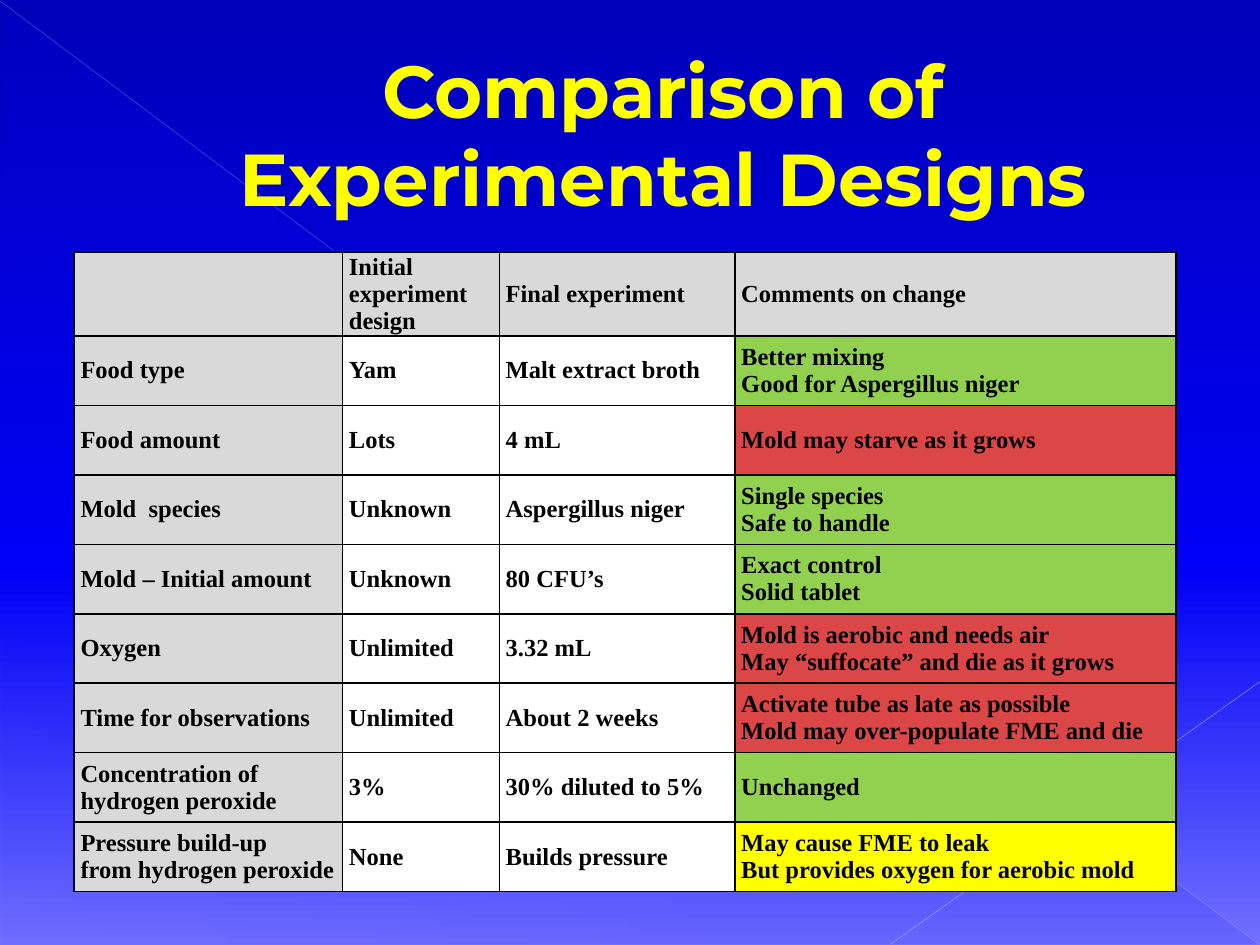
import pptx
import pptx.dml.color
import pptx.enum.shapes
import pptx.enum.text
import pptx.oxml.ns
import pptx.util
from lxml import etree

Pt = pptx.util.Pt
qn = pptx.oxml.ns.qn
MIDDLE = pptx.enum.text.MSO_ANCHOR.MIDDLE

GREY, WHITE, BLACK, YELLOW = "D9D9D9", "FFFFFF", "000000", "FFFF00"
BETTER, WORSE, MIXED = "92D050", "DB4747", YELLOW

HEADINGS = ["", "Initial experiment design", "Final experiment", "Comments on change"]
COMPARISONS = [
    ("Food type", "Yam", "Malt extract broth",
     "Better mixing\nGood for Aspergillus niger", BETTER),
    ("Food amount", "Lots", "4 mL", "Mold may starve as it grows", WORSE),
    ("Mold  species", "Unknown", "Aspergillus niger",
     "Single species\nSafe to handle", BETTER),
    ("Mold – Initial amount", "Unknown", "80 CFU’s",
     "Exact control\nSolid tablet", BETTER),
    ("Oxygen", "Unlimited", "3.32 mL",
     "Mold is aerobic and needs air\nMay “suffocate” and die as it grows", WORSE),
    ("Time for observations", "Unlimited", "About 2 weeks",
     "Activate tube as late as possible\nMold may over-populate FME and die", WORSE),
    ("Concentration of hydrogen peroxide", "3%", "30% diluted to 5%",
     "Unchanged", BETTER),
    ("Pressure build-up\nfrom hydrogen peroxide", "None", "Builds pressure",
     "May cause FME to leak\nBut provides oxygen for aerobic mold", MIXED),
]
COLUMN_WIDTHS = [153.4, 89.6, 134.6, 252]
HEADER_HEIGHT, ROW_HEIGHT = 48, 39.7

TITLE_FONT = {"name": "Montserrat", "size": Pt(42), "bold": True}
CELL_FONT = {"name": "Times New Roman", "size": Pt(14), "bold": True}
CELL_FORMAT = {"margin_left": Pt(3.6), "margin_right": Pt(3.6),
               "margin_top": 0, "margin_bottom": 0, "vertical_anchor": MIDDLE}


def colour(hex_value):
    return pptx.dml.color.RGBColor.from_string(hex_value)


def apply_format(target, values):
    for name, value in values.items():
        setattr(target, name, value)


def set_opacity(colour_element, percent):
    etree.SubElement(colour_element, qn("a:alpha"), val=str(percent * 1000))


def add_solid_line(parent, tag, hex_value, width):
    line = etree.Element(qn(tag), w=str(Pt(width)))
    fill = etree.SubElement(line, qn("a:solidFill"))
    etree.SubElement(fill, qn("a:srgbClr"), val=hex_value)
    parent.insert(0, line)


def set_gradient(fill, owner, stops, angle):
    fill.gradient()
    gradient = owner.find(".//" + qn("a:gradFill"))
    for child in list(gradient):
        gradient.remove(child)
    stop_list = etree.SubElement(gradient, qn("a:gsLst"))
    for position, hex_value, opacity in stops:
        stop = etree.SubElement(stop_list, qn("a:gs"), pos=str(position * 1000))
        set_opacity(etree.SubElement(stop, qn("a:srgbClr"), val=hex_value), opacity)
    etree.SubElement(gradient, qn("a:lin"), ang=str(angle * 60000), scaled="0")


def add_backdrop(slide, left, top, width, height):
    set_gradient(slide.background.fill, slide.element,
                 [(0, "0000B9", 100), (60, "0000F6", 100), (100, "7070FF", 100)], 90)
    sheen = slide.shapes.add_shape(pptx.enum.shapes.MSO_SHAPE.RIGHT_TRIANGLE,
                                   Pt(left + 1), Pt(top + 1),
                                   Pt(width - 2), Pt(height - 2))
    sheen.shadow.inherit = False
    sheen.line.fill.background()
    set_gradient(sheen.fill, sheen.element,
                 [(0, "0000FF", 10), (70, "0000FF", 8), (100, "0000FF", 1)], 133)

    right, bottom = left + width, top + height
    diagonals = [
        ((left, top + 0.5, right - 0.5, bottom - 0.5), "B4B4FF", 0.39, 35),
        ((right, top + 389.5, left + 509, bottom - 0.5), "BDBDFF", 0.47, 45),
    ]
    for ends, hex_value, weight, opacity in diagonals:
        diagonal = slide.shapes.add_connector(pptx.enum.shapes.MSO_CONNECTOR.STRAIGHT,
                                              *map(Pt, ends))
        diagonal.line.width = Pt(weight)
        diagonal.line.color.rgb = colour(hex_value)
        properties = diagonal.element.spPr
        set_opacity(properties.find(".//" + qn("a:srgbClr")), opacity)
        etree.SubElement(properties, qn("a:effectLst"))


def place_title(slide, left, top, width, height):
    title = slide.shapes.title
    title.element.getparent().append(title.element)
    apply_format(title, {"left": Pt(left), "top": Pt(top),
                         "width": Pt(width), "height": Pt(height)})
    apply_format(title.text_frame, {"text": "Comparison of Experimental Designs",
                                    "word_wrap": True, "vertical_anchor": MIDDLE,
                                    "auto_size": pptx.enum.text.MSO_AUTO_SIZE.NONE})
    heading = title.text_frame.paragraphs[0]
    heading.alignment = pptx.enum.text.PP_ALIGN.CENTER
    apply_format(heading, {"space_before": Pt(0)})
    indent = heading.runs[0].font
    apply_format(indent, TITLE_FONT)
    indent.color.rgb = colour(YELLOW)
    add_solid_line(title.element.find(".//" + qn("a:rPr")), "a:ln", "B10000", 0.5)
    paragraph_properties = title.element.find(".//" + qn("a:pPr"))
    paragraph_properties.set("marL", str(Pt(38)))
    paragraph_properties.set("indent", "0")


def fill_cell(cell, text, hex_value):
    apply_format(cell, {"text": text, **CELL_FORMAT})
    cell.fill.solid()
    cell.fill.fore_color.rgb = colour(hex_value)
    for paragraph in cell.text_frame.paragraphs:
        apply_format(paragraph.font, CELL_FONT)
        for run in paragraph.runs:
            apply_format(run.font, CELL_FONT)
            run.font.color.rgb = colour(BLACK)


def add_comparison_table(slide, left, top):
    heights = [HEADER_HEIGHT] + [ROW_HEIGHT] * len(COMPARISONS)
    frame = slide.shapes.add_table(len(heights), len(COLUMN_WIDTHS), Pt(left), Pt(top),
                                   Pt(sum(COLUMN_WIDTHS)), Pt(sum(heights)))
    table = frame.table
    for column, width in zip(table.columns, COLUMN_WIDTHS):
        column.width = Pt(width)
    for row, height in zip(table.rows, heights):
        row.height = Pt(height)

    for cell, heading in zip(table.rows[0].cells, HEADINGS):
        fill_cell(cell, heading, GREY)
    for row, (*texts, verdict) in enumerate(COMPARISONS, 1):
        fills = [GREY, WHITE, WHITE, verdict]
        for cell, text, fill in zip(table.rows[row].cells, texts, fills):
            fill_cell(cell, text, fill)

    for cell_properties in frame.element.iter(qn("a:tcPr")):
        for side in ("a:lnB", "a:lnT", "a:lnR", "a:lnL"):
            add_solid_line(cell_properties, side, BLACK, 1)


def main():
    deck = pptx.Presentation()
    deck.slide_width, deck.slide_height = Pt(720), Pt(540)
    slide = deck.slides.add_slide(deck.slide_layouts.get_by_name("Title Only"))
    add_backdrop(slide, 0, 0, 720, 540)
    place_title(slide, 36, 21, 648, 110)
    add_comparison_table(slide, 42.4, 144)
    deck.save("out.pptx")


if __name__ == "__main__":
    main()
